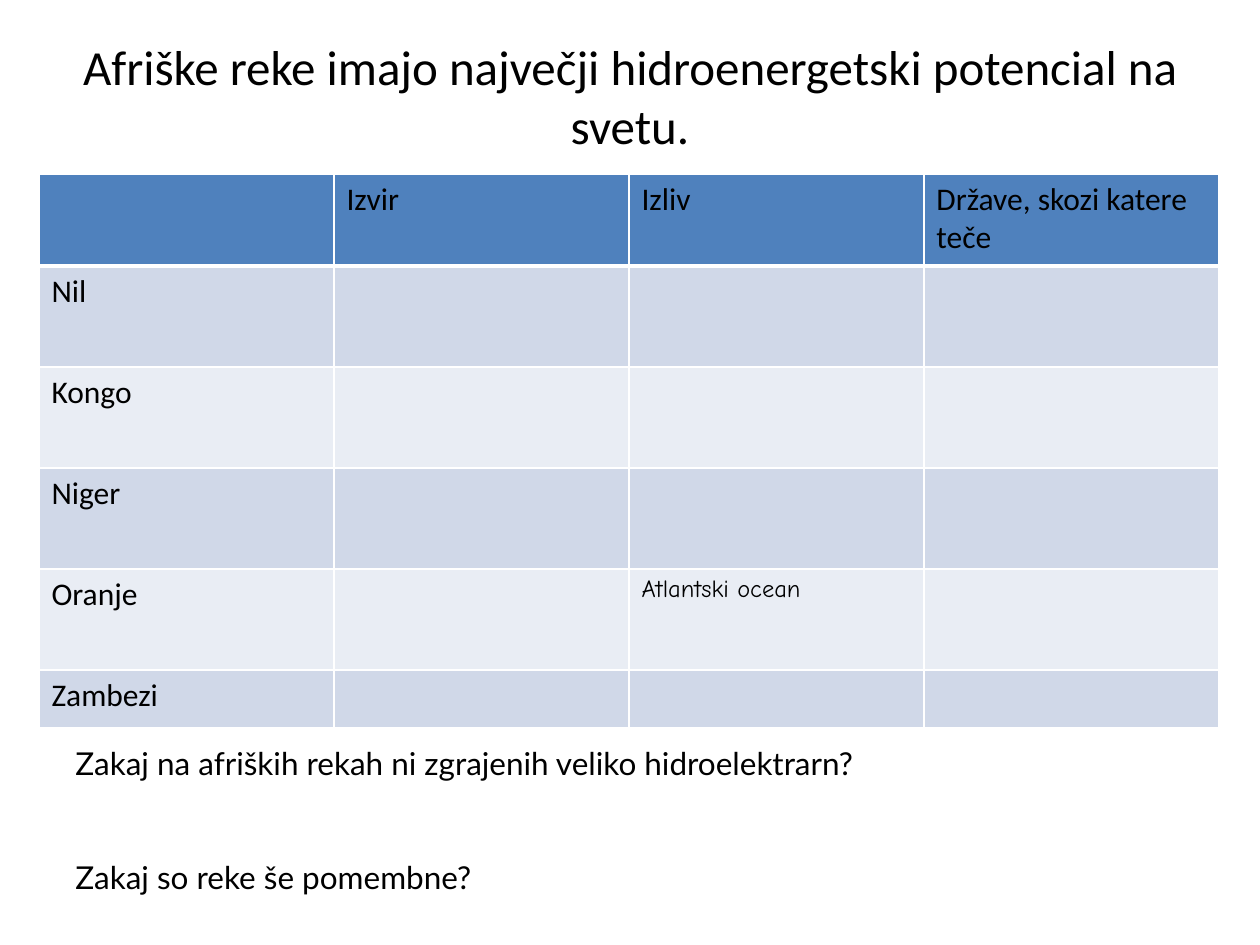
"""Build a slide with a worksheet table on African rivers and two questions."""
import pptx
import pptx.dml.color
import pptx.enum.text
import pptx.oxml
import pptx.oxml.ns
import pptx.util
from dataclasses import dataclass

HEADLINE = "Afriške reke imajo največji hidroenergetski potencial na svetu."
RIVER_ROWS = [
    ("", "Izvir", "Izliv", "Države, skozi katere teče"),
    ("Nil", "", "", ""),
    ("Kongo", "", "", ""),
    ("Niger", "", "", ""),
    ("Oranje", "", "Atlantski ocean", ""),
    ("Zambezi", "", "", ""),
]
QUESTIONS = [
    "Zakaj na afriških rekah ni zgrajenih veliko hidroelektrarn?",
    "Zakaj so reke še pomembne?",
]

PX = 914400 / 126
SLIDE_SIZE = (1260, 945)
HEADLINE_BOX = (63, 16, 1134, 158)
RIVERS_BOX = (39, 174, 1180, 554)
QUESTIONS_BOX = (63, 738, 1062, 165)
ROW_HEIGHTS = [92, 101, 101, 101, 101, 58]


@dataclass(frozen=True)
class Theme:
    text: str = "000000"
    header: str = "4F81BD"
    bands: tuple = ("E9EDF4", "D0D8E8")
    rule: str = "FFFFFF"
    thin: int = 1
    thick: int = 3
    headline: tuple = ("Calibri", 28)
    label: tuple = ("Calibri", 18)
    answer: tuple = ("Comic Neue", 14)
    question: tuple = ("Lato", 18)
    question_gap: float = 43.2


THEME = Theme()


def emu(*lengths):
    return [pptx.util.Emu(round(length * PX)) for length in lengths]


def rgb(code):
    return pptx.dml.color.RGBColor.from_string(code)


def add_run(paragraph, words, style):
    run = paragraph.add_run()
    run.text = words
    run.font.name = style[0]
    run.font.size = pptx.util.Pt(style[1])
    run.font.bold = False
    run.font.color.rgb = rgb(THEME.text)


def rule_cell(cell, is_header):
    properties = cell._tc.get_or_add_tcPr()
    for side in ("L", "R", "T", "B"):
        weight = THEME.thick if is_header and side == "B" else THEME.thin
        properties.append(pptx.oxml.parse_xml(
            f'<a:ln{side} {pptx.oxml.ns.nsdecls("a")} w="{pptx.util.Pt(weight)}">'
            f'<a:solidFill><a:srgbClr val="{THEME.rule}"/></a:solidFill></a:ln{side}>'
        ))


def add_headline(slide):
    headline = slide.shapes.title
    headline.left, headline.top, headline.width, headline.height = emu(*HEADLINE_BOX)
    headline.text_frame.vertical_anchor = pptx.enum.text.MSO_ANCHOR.MIDDLE
    paragraph = headline.text_frame.paragraphs[0]
    paragraph.alignment = pptx.enum.text.PP_ALIGN.CENTER
    add_run(paragraph, HEADLINE, THEME.headline)


def add_rivers(slide):
    column_count = len(RIVER_ROWS[0])
    rivers = slide.shapes.add_table(
        len(RIVER_ROWS), column_count, *emu(*RIVERS_BOX)).table
    for column in rivers.columns:
        column.width = emu(RIVERS_BOX[2] / column_count)[0]
    for r, entries in enumerate(RIVER_ROWS):
        rivers.rows[r].height = emu(ROW_HEIGHTS[r])[0]
        for c, entry in enumerate(entries):
            cell = rivers.cell(r, c)
            rule_cell(cell, r == 0)
            cell.fill.solid()
            cell.fill.fore_color.rgb = rgb(THEME.bands[r % 2] if r else THEME.header)
            if entry:
                style = THEME.answer if r and c else THEME.label
                add_run(cell.text_frame.paragraphs[0], entry, style)


def add_questions(slide):
    frame = slide.shapes.add_textbox(*emu(*QUESTIONS_BOX)).text_frame
    frame.word_wrap = True
    for i, question in enumerate(QUESTIONS):
        paragraph = frame.add_paragraph() if i else frame.paragraphs[0]
        if i:
            paragraph.space_before = pptx.util.Pt(THEME.question_gap)
        add_run(paragraph, question, THEME.question)


def main():
    deck = pptx.Presentation()
    deck.slide_width, deck.slide_height = emu(*SLIDE_SIZE)
    slide = deck.slides.add_slide(deck.slide_layouts.get_by_name("Title Only"))
    add_headline(slide)
    add_rivers(slide)
    add_questions(slide)
    deck.save("out.pptx")


if __name__ == "__main__":
    main()
